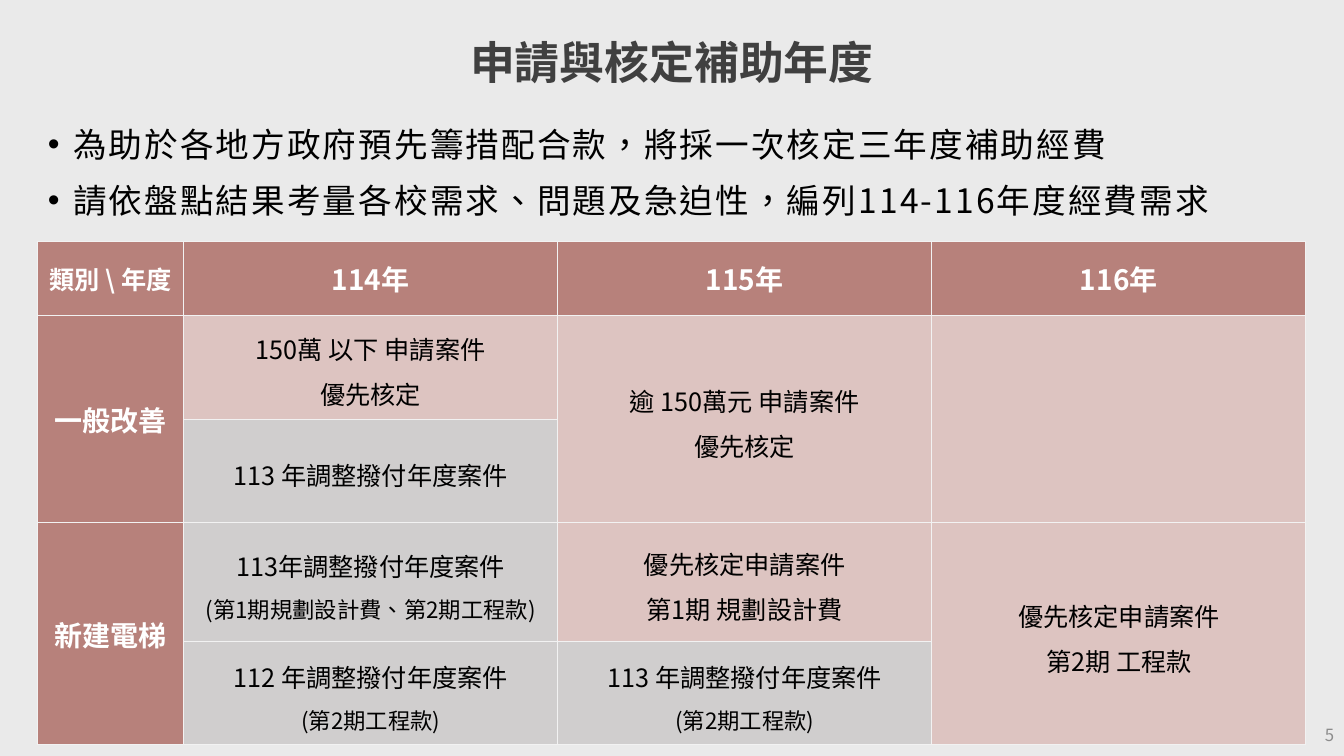
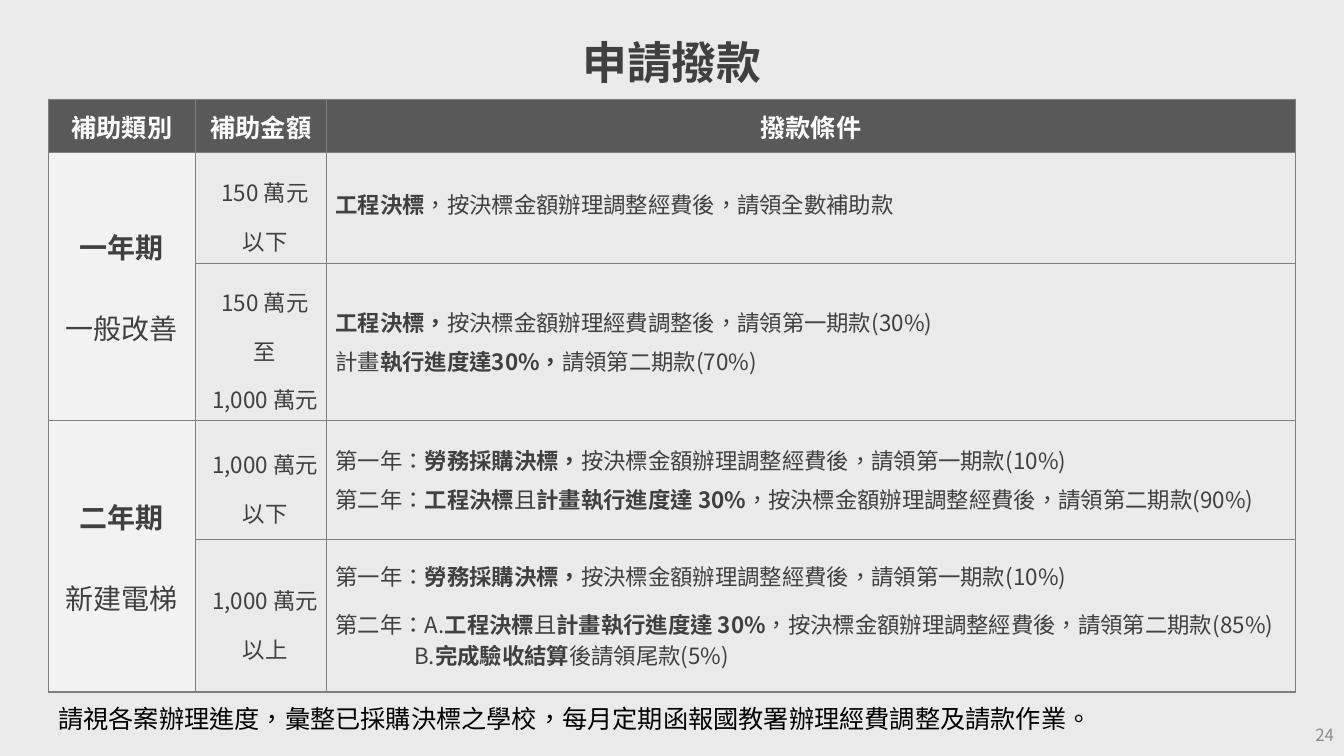
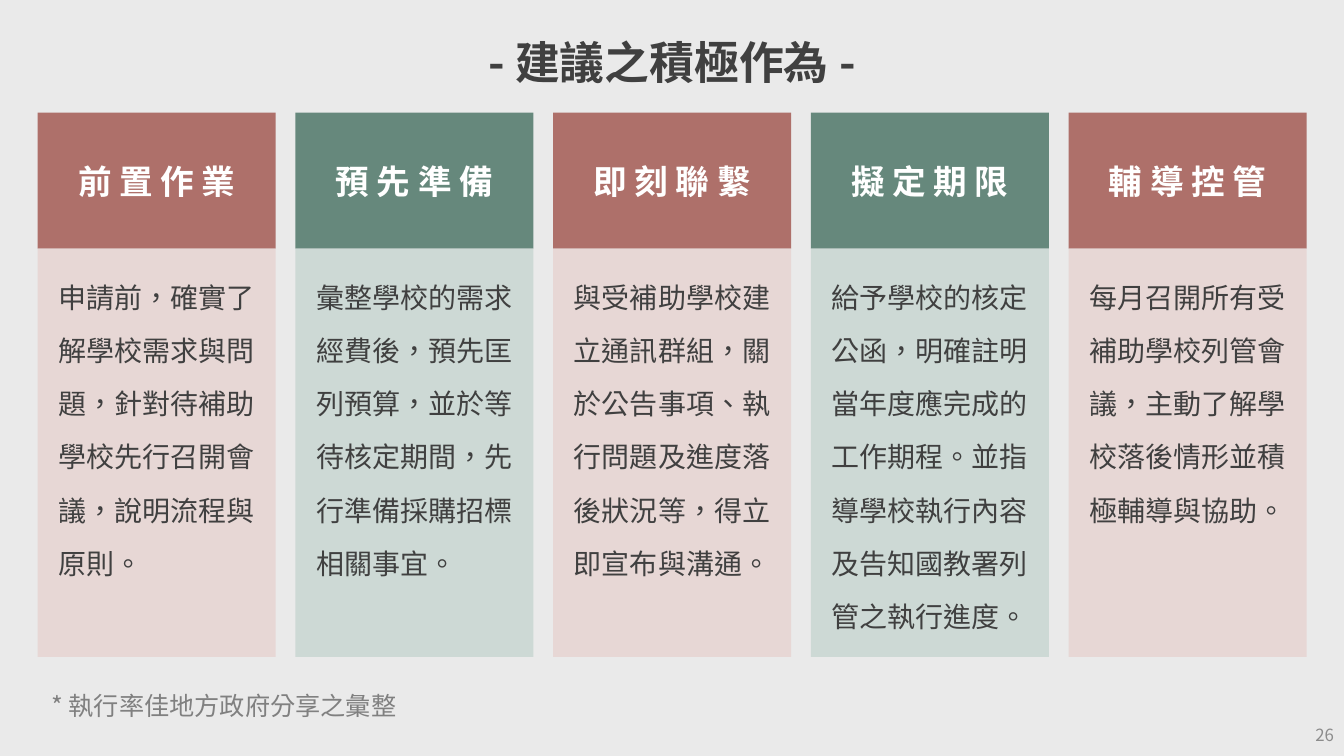
from dataclasses import dataclass, replace
from typing import Any, Optional, Sequence, Union

from lxml import etree
from pptx import Presentation
from pptx.dml.color import RGBColor
from pptx.enum import shapes, text
from pptx.oxml import ns
from pptx.util import Pt

FONT = "Noto Sans CJK SC"
LATIN_FONT = "Arial"
PAGE_WIDTH, PAGE_HEIGHT = 960, 540

PAPER = RGBColor(0xEA, 0xEA, 0xEA)
INK = RGBColor(0x40, 0x40, 0x40)
BLACK = RGBColor(0x00, 0x00, 0x00)
WHITE = RGBColor(0xFF, 0xFF, 0xFF)
NUMBER_GREY = RGBColor(0x8C, 0x8C, 0x8C)
NOTE_GREY = RGBColor(0x80, 0x80, 0x80)
OFF_WHITE = RGBColor(0xF2, 0xF2, 0xF2)
HEAD_GREY = RGBColor(0x59, 0x59, 0x59)
RULE_GREY = RGBColor(0x7F, 0x7F, 0x7F)
CELL_GREY = RGBColor(0xD0, 0xCE, 0xCE)
ROSE = RGBColor(0xB7, 0x81, 0x7B)
PALE_ROSE = RGBColor(0xDD, 0xC4, 0xC1)
CARD_RED = RGBColor(0xAE, 0x70, 0x6A)
CARD_PINK = RGBColor(0xE7, 0xD7, 0xD5)
CARD_GREEN = RGBColor(0x66, 0x88, 0x7C)
CARD_MINT = RGBColor(0xCD, 0xD9, 0xD5)

LEFT, CENTER, RIGHT = text.PP_ALIGN.LEFT, text.PP_ALIGN.CENTER, text.PP_ALIGN.RIGHT
TOP, MIDDLE = text.MSO_ANCHOR.TOP, text.MSO_ANCHOR.MIDDLE
Insets = tuple[float, float, float, float]
BOX_INSETS: Insets = (7.2, 3.6, 7.2, 3.6)


@dataclass(frozen=True)
class Para:
    """One paragraph; bars in the words switch bold on and off."""
    words: str = ""
    size: float = 18
    color: RGBColor = INK
    bold: bool = False
    align: Any = LEFT
    line: Union[float, Pt, None] = None
    before: float = 0
    after: float = 0
    margin: float = 0
    bullet: bool = False
    tracking: float = 0
    font: str = FONT


@dataclass(frozen=True)
class Cell:
    row: int
    col: int
    paras: Sequence[Para] = ()
    fill: Optional[RGBColor] = None
    rows: int = 1
    insets: Insets = (5, 0, 5, 0)


@dataclass(frozen=True)
class Grid:
    left: float
    top: float
    widths: Sequence[float]
    heights: Sequence[float]
    rule: RGBColor
    rule_width: float


@dataclass(frozen=True)
class Card:
    heading: str
    body: str


def assign(target: Any, values: dict[str, Any]) -> None:
    for name, value in values.items():
        setattr(target, name, value)


def lines(style: Para, *words: str) -> list[Para]:
    return [replace(style, words=item) for item in words]


def set_insets(target: Any, insets: Insets) -> None:
    sides = ("margin_left", "margin_top", "margin_right", "margin_bottom")
    assign(target, dict(zip(sides, map(Pt, insets))))


def add_span(paragraph: Any, words: str, para: Para, bold: bool) -> None:
    span = paragraph.add_run()
    span.text = words
    assign(span.font, {"name": para.font, "size": Pt(para.size), "bold": bold})
    span.font.color.rgb = para.color
    properties = span.font._element
    properties.set("lang", "zh-TW")
    if para.tracking:
        properties.set("spc", str(round(para.tracking * 100)))
    latin = properties.find(ns.qn("a:latin"))
    east_asian = etree.Element(ns.qn("a:ea"), typeface=FONT)
    latin.addnext(east_asian)


def write(frame: Any, paras: Sequence[Para]) -> None:
    for index, para in enumerate(paras):
        paragraph = frame.add_paragraph() if index else frame.paragraphs[0]
        properties = paragraph._p.get_or_add_pPr()
        if para.margin:
            properties.set("marL", str(Pt(para.margin)))
        if para.bullet:
            properties.set("indent", str(-Pt(para.margin)))
            etree.SubElement(properties, ns.qn("a:buFont"), typeface=LATIN_FONT)
            etree.SubElement(properties, ns.qn("a:buChar"), char="•")
        assign(paragraph, {
            "alignment": para.align, "line_spacing": para.line,
            "space_before": Pt(para.before), "space_after": Pt(para.after),
        })
        for part, words in enumerate(para.words.split("|")):
            if words:
                add_span(paragraph, words, para, para.bold != bool(part % 2))


def add_text(page: Any, left: float, top: float, width: float, height: float,
             paras: Sequence[Para], anchor: Any = TOP) -> None:
    box = page.shapes.add_textbox(Pt(left), Pt(top), Pt(width), Pt(height))
    assign(box.text_frame, {"word_wrap": True, "vertical_anchor": anchor})
    set_insets(box.text_frame, BOX_INSETS)
    write(box.text_frame, paras)


def add_block(page: Any, left: float, top: float, width: float, height: float,
              fill: RGBColor, para: Para, anchor: Any, insets: Insets) -> Any:
    block = page.shapes.add_shape(
        shapes.MSO_SHAPE.RECTANGLE, Pt(left), Pt(top), Pt(width), Pt(height))
    block.shadow.inherit = False
    block.fill.solid()
    block.fill.fore_color.rgb = fill
    block.line.fill.background()
    assign(block.text_frame, {"word_wrap": True, "vertical_anchor": anchor})
    set_insets(block.text_frame, insets)
    write(block.text_frame, [para])
    return block


def add_borders(cell: Any, color: RGBColor, width: float) -> None:
    properties = cell._tc.get_or_add_tcPr()
    for side in ("lnL", "lnR", "lnT", "lnB"):
        line = etree.SubElement(properties, ns.qn(f"a:{side}"), w=str(Pt(width)))
        fill = etree.SubElement(line, ns.qn("a:solidFill"))
        etree.SubElement(fill, ns.qn("a:srgbClr"), val=str(color))


def add_grid(page: Any, grid: Grid, cells: Sequence[Cell]) -> None:
    table = page.shapes.add_table(
        len(grid.heights), len(grid.widths), Pt(grid.left), Pt(grid.top),
        Pt(sum(grid.widths)), Pt(sum(grid.heights))).table
    assign(table, {"first_row": False, "horz_banding": False})
    for column, width in zip(table.columns, grid.widths):
        column.width = Pt(width)
    for row, height in zip(table.rows, grid.heights):
        row.height = Pt(height)
    for cell in table.iter_cells():
        add_borders(cell, grid.rule, grid.rule_width)
    for item in cells:
        cell = table.cell(item.row, item.col)
        if item.rows > 1:
            cell.merge(table.cell(item.row + item.rows - 1, item.col))
        for row in range(item.row, item.row + item.rows):
            fill = table.cell(row, item.col).fill
            if item.fill is None:
                fill.background()
            else:
                fill.solid()
                fill.fore_color.rgb = item.fill
        cell.vertical_anchor = MIDDLE
        set_insets(cell, item.insets)
        write(cell.text_frame, item.paras)


def add_page(deck: Any, title: str, number: int) -> Any:
    page = deck.slides.add_slide(deck.slide_layouts[6])
    add_text(page, 744, 510.5, 216, 28.8,
             [Para(str(number), 12, NUMBER_GREY, align=RIGHT)], MIDDLE)
    add_text(page, 0, 21.3, PAGE_WIDTH, 49,
             [Para(title, 32, bold=True, align=CENTER)])
    return page


def add_years_page(deck: Any) -> None:
    page = add_page(deck, "申請與核定補助年度", 5)
    head = Para(size=20, color=WHITE, bold=True, align=CENTER)
    case = Para(color=BLACK, align=CENTER, after=6)
    stage = replace(case, size=16)
    padded: Insets = (5, 5.8, 5, 0)

    def case_cell(row: int, col: int, fill: RGBColor, paras: Sequence[Para],
                  rows: int = 1) -> Cell:
        return Cell(row, col, paras, fill, rows, padded)

    cells = [Cell(0, 0, lines(replace(head, size=18), "類別 \\ 年度"), ROSE)]
    cells += [Cell(0, col, lines(head, f"{113 + col}年"), ROSE) for col in (1, 2, 3)]
    cells += [
        Cell(1, 0, lines(head, "一般改善"), ROSE, 2),
        Cell(3, 0, lines(head, "新建電梯"), ROSE, 2),
        case_cell(1, 1, PALE_ROSE, lines(case, "150萬 以下 申請案件", "優先核定")),
        case_cell(1, 2, PALE_ROSE, lines(case, "逾 150萬元 申請案件", "優先核定"), 2),
        case_cell(1, 3, PALE_ROSE, (), 2),
        case_cell(2, 1, CELL_GREY, lines(case, "113 年調整撥付年度案件")),
        case_cell(3, 1, CELL_GREY, lines(case, "113年調整撥付年度案件")
                  + lines(stage, "(第1期規劃設計費、第2期工程款)")),
        case_cell(3, 2, PALE_ROSE, lines(case, "優先核定申請案件", "第1期 規劃設計費")),
        case_cell(3, 3, PALE_ROSE, lines(case, "優先核定申請案件", "第2期 工程款"), 2),
    ]
    cells += [
        case_cell(4, col, CELL_GREY, lines(case, f"{year} 年調整撥付年度案件")
                  + lines(stage, "(第2期工程款)"))
        for col, year in ((1, 112), (2, 113))
    ]
    grid = Grid(27, 172.8, [104.2] + [267.2] * 3, [52.3, 74.2, 74.2, 84.4, 74.2],
                OFF_WHITE, 0.75)
    add_grid(page, grid, cells)
    point = Para(size=24, color=BLACK, line=1.4, margin=18, bullet=True, tracking=1.5)
    add_text(page, 27.2, 73.4, 903, 87.8, lines(
        point,
        "為助於各地方政府預先籌措配合款，將採一次核定三年度補助經費",
        "請依盤點結果考量各校需求、問題及急迫性，編列114-116年度經費需求"))


def add_payment_page(deck: Any) -> None:
    page = add_page(deck, "申請撥款", 24)
    tight: Insets = (0.7, 0.7, 0.7, 0)
    head = Para(color=WHITE, bold=True, align=CENTER)
    term = Para(size=20, align=CENTER)
    amount = Para(size=16, align=CENTER, line=1.5, margin=5.8)
    rule = Para(size=16, line=Pt(22), margin=5.8)
    first_year = "第一年：|勞務採購決標，|按決標金額辦理調整經費後，請領第一期款(10%)"
    second_year = "|工程決標|且|計畫執行進度達 30%|，按決標金額辦理調整經費後，請領第二期款"

    terms = (("一年期", "一般改善"), ("二年期", "新建電梯"))
    amounts = (("150 萬元", "以下"), ("150 萬元", "至", "1,000 萬元"),
               ("1,000 萬元以下",), ("1,000 萬元以上",))
    conditions = (
        [replace(rule, words="|工程決標|，按決標金額辦理調整經費後，請領全數補助款",
                 line=Pt(16))],
        [replace(rule, words="|工程決標，|按決標金額辦理經費調整後，請領第一期款(30%)",
                 after=6),
         replace(rule, words="計畫|執行進度達30%，|請領第二期款(70%)", after=12)],
        [replace(rule, words=first_year, after=6),
         replace(rule, words=f"第二年：{second_year}(90%)")],
        [replace(rule, words=first_year, after=12),
         replace(rule, words=f"第二年：A.{second_year}(85%)"),
         replace(rule, words="B.|完成驗收結算|後請領尾款(5%)", margin=62, after=6)],
    )
    cells = [Cell(0, col, lines(head, words), HEAD_GREY, insets=tight)
             for col, words in enumerate(("補助類別", "補助金額", "撥款條件"))]
    for index, (period, kind) in enumerate(terms):
        paras = [replace(term, words=period, bold=True),
                 replace(term, words=kind, before=29)]
        cells.append(Cell(1 + 2 * index, 0, paras, OFF_WHITE, 2, tight))
    for row, (limits, paras) in enumerate(zip(amounts, conditions), 1):
        cells.append(Cell(row, 1, lines(amount, *limits), insets=tight))
        cells.append(Cell(row, 2, paras, insets=tight))
    grid = Grid(34.6, 70.8, (105, 93.6, 692), (38, 79.2, 112.3, 85, 109), RULE_GREY, 1)
    add_grid(page, grid, cells)
    add_text(page, 34.6, 499, 859, 28.8, [Para(
        "請視各案辦理進度，彙整已採購決標之學校，每月定期函報國教署辦理經費調整及請款作業。",
        color=BLACK, font=LATIN_FONT)])


def add_advice_page(deck: Any) -> None:
    page = add_page(deck, "- 建議之積極作為 -", 26)
    cards = (
        Card("前 置 作 業",
             "申請前，確實了解學校需求與問題，針對待補助學校先行召開會議，說明流程與原則。"),
        Card("預 先 準 備",
             "彙整學校的需求經費後，預先匡列預算，並於等待核定期間，先行準備採購招標相關事宜。"),
        Card("即 刻 聯 繫",
             "與受補助學校建立通訊群組，關於公告事項、執行問題及進度落後狀況等，得立即宣布與溝通。"),
        Card("擬 定 期 限",
             "給予學校的核定公函，明確註明當年度應完成的工作期程。"
             "並指導學校執行內容及告知國教署列管之執行進度。"),
        Card("輔 導 控 管",
             "每月召開所有受補助學校列管會議，主動了解學校落後情形並積極輔導與協助。"),
    )
    schemes = ((CARD_RED, CARD_PINK), (CARD_GREEN, CARD_MINT))
    left, top, width, pitch = 26.9, 80.4, 170, 184.1
    head_height, body_height = 97.2, 291.6
    for index, card in enumerate(cards):
        x = left + index * pitch
        strong, pale = schemes[index % 2]
        add_block(page, x, top, width, head_height, strong,
                  Para(card.heading, 24, WHITE, True, CENTER), MIDDLE, BOX_INSETS)
        body = add_block(page, x, top + head_height, width, body_height, pale,
                         Para(card.body, 20, line=Pt(38)), TOP, (8.6,) * 4)
        body.text_frame._txBody.bodyPr.set("anchorCtr", "1")
    add_text(page, 29.5, 489.6, 520, 41,
             [Para("* 執行率佳地方政府分享之彙整", color=NOTE_GREY)])


def main() -> None:
    deck = Presentation()
    assign(deck, {"slide_width": Pt(PAGE_WIDTH), "slide_height": Pt(PAGE_HEIGHT)})
    backdrop = deck.slide_master.background.fill
    backdrop.solid()
    backdrop.fore_color.rgb = PAPER
    add_years_page(deck)
    add_payment_page(deck)
    add_advice_page(deck)
    deck.save("out.pptx")


if __name__ == "__main__":
    main()
